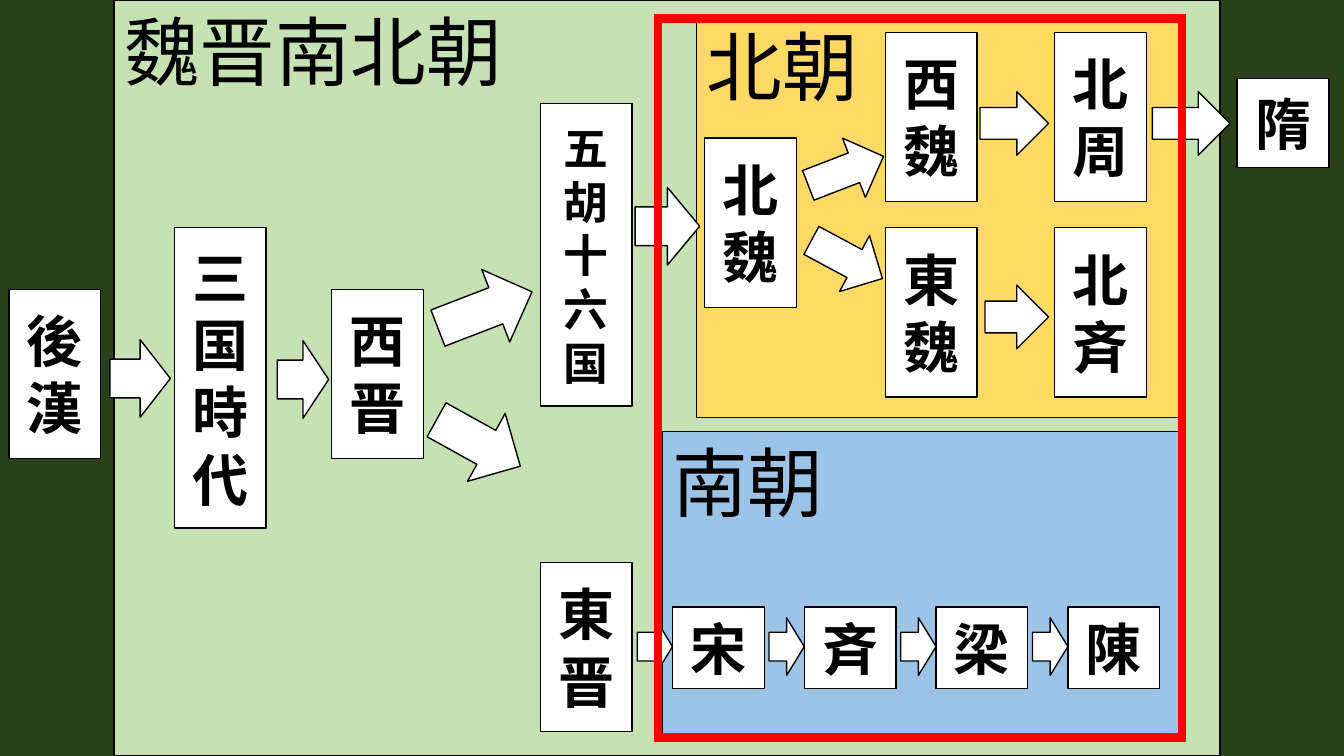
"""Build a slide charting the Chinese dynasties from Later Han to Sui."""
import pptx
import pptx.dml.color
import pptx.enum.shapes
import pptx.enum.text
import pptx.util

Inches = pptx.util.Inches
Pt = pptx.util.Pt
SHAPES = pptx.enum.shapes.MSO_SHAPE
ANCHOR = pptx.enum.text.MSO_ANCHOR
ALIGN = pptx.enum.text.PP_ALIGN

COLORS = {
    "background": "29401A",
    "era": "C6E1B4",
    "south": "9DC3E6",
    "north": "FFD966",
    "box": "FFFFFF",
    "ink": "000000",
    "frame": "FF0000",
}
FONT = "Calibri"
BOX_WIDTH = 0.91
BOX_HEIGHT = 1.68


def color(name):
    """Return the named palette colour."""
    return pptx.dml.color.RGBColor.from_string(COLORS[name])


def paint(shape, fill, line="ink"):
    """Give a shape its fill and thin outline."""
    shape.fill.solid()
    shape.fill.fore_color.rgb = color(fill)
    shape.line.color.rgb = color(line)
    shape.line.width = Pt(1)


def write(shape, text, size, bold, align, anchor):
    """Fill a shape with uniformly formatted paragraphs."""
    frame = shape.text_frame
    frame.text = text
    frame.word_wrap = True
    frame.auto_size = pptx.enum.text.MSO_AUTO_SIZE.NONE
    frame.vertical_anchor = anchor
    for paragraph in frame.paragraphs:
        paragraph.alignment = align
        paragraph.font.name = FONT
        paragraph.font.size = Pt(size)
        paragraph.font.bold = bold
        paragraph.font.color.rgb = color("ink")


def add_shape(slide, kind, left, top, width, height, fill, line="ink"):
    """Add a flat preset shape, measured in inches."""
    shape = slide.shapes.add_shape(
        kind, Inches(left), Inches(top), Inches(width), Inches(height))
    shape.shadow.inherit = False
    paint(shape, fill, line)
    return shape


def add_panel(slide, box, text, fill):
    """Add a coloured region with its large label."""
    panel = add_shape(slide, SHAPES.RECTANGLE, *box, fill)
    write(panel, text, 54, False, ALIGN.LEFT, ANCHOR.TOP)


def add_dynasty(slide, text, left, top, height=BOX_HEIGHT, size=40):
    """Add a white box naming a dynasty."""
    dynasty = add_shape(
        slide, SHAPES.RECTANGLE, left, top, BOX_WIDTH, height, "box")
    write(dynasty, text, size, True, ALIGN.CENTER, ANCHOR.MIDDLE)


def add_arrow(slide, left, top, width, height, rotation=0):
    """Add a white block arrow."""
    arrow = add_shape(
        slide, SHAPES.RIGHT_ARROW, left, top, width, height, "box")
    arrow.rotation = rotation


def add_era(slide, box):
    """Turn the title into the era panel behind everything."""
    title = slide.shapes.title
    title.left, title.top, title.width, title.height = map(Inches, box)
    paint(title, "era")
    write(title, "魏晋南北朝", 54, False, ALIGN.LEFT, ANCHOR.TOP)


def add_early_dynasties(slide, box):
    """Place the states from Later Han to the north-south split."""
    left, top = box[:2]
    add_dynasty(slide, "後漢", left - 1.04, top + 2.87)
    add_dynasty(slide, "三国時代", left + 0.6, top + 2.26, 2.98)
    add_dynasty(slide, "西晋", left + 2.16, top + 2.87)
    add_dynasty(slide, "五胡\n十六国", left + 4.23, top + 1.03, 3, 32)
    add_dynasty(slide, "東晋", left + 4.23, top + 5.58)
    for x, y, width, rotation in (
            (-0.04, 3.37, 0.6, 0), (1.62, 3.38, 0.51, 0),
            (3.18, 2.69, 1, 338.9), (3.14, 4.01, 0.95, 29),
            (5.17, 1.86, 0.64, 0)):
        add_arrow(slide, left + x, top + y, width, 0.77, rotation)


def add_north(slide, box):
    """Place the northern dynasties and the arrow on to Sui."""
    left, top = box[:2]
    add_panel(slide, box, "北朝", "north")
    add_dynasty(slide, "北魏", left + 0.08, top + 1.22)
    for row, names in enumerate((("西魏", "北周"), ("東魏", "北斉"))):
        for column, name in enumerate(names):
            add_dynasty(slide, name, left + 1.87 + 1.68 * column,
                        top + 0.17 + 1.94 * row)
    for x, y, width, rotation in (
            (1.08, 1.23, 0.8, 338.9), (1.09, 2.11, 0.8, 28.2),
            (2.81, 0.76, 0.68, 0), (2.86, 2.68, 0.63, 0),
            (4.52, 0.76, 0.77, 0)):
        add_arrow(slide, left + x, top + y, width, 0.63, rotation)
    add_dynasty(slide, "隋", left + 5.36, top + 0.63, 0.88)


def add_south(slide, box):
    """Place the southern dynasties in a row, each led in by an arrow."""
    left, top = box[:2]
    add_panel(slide, box, "南朝", "south")
    for index, name in enumerate("宋斉梁陳"):
        x = left + 0.1 + 1.307 * index
        add_dynasty(slide, name, x, top + 1.74, 0.81)
        add_arrow(slide, x - 0.35, top + 1.85, 0.35, 0.57)


def add_frame(slide, box):
    """Outline the northern and southern dynasties in red."""
    frame = add_shape(slide, SHAPES.FRAME, *box, "frame", "frame")
    frame.adjustments[0] = 0.014


def main():
    """Build and save the presentation."""
    presentation = pptx.Presentation()
    presentation.slide_width = Inches(13.33)
    presentation.slide_height = Inches(7.5)
    slide = presentation.slides.add_slide(presentation.slide_layouts[5])
    slide.background.fill.solid()
    slide.background.fill.fore_color.rgb = color("background")
    era = (1.13, 0, 10.97, 7.5)
    add_era(slide, era)
    add_south(slide, (6.57, 4.28, 5.19, 3.07))
    add_north(slide, (6.91, 0.15, 4.85, 3.99))
    add_early_dynasties(slide, era)
    add_frame(slide, (6.49, 0.15, 5.27, 7.2))
    presentation.save("out.pptx")


if __name__ == "__main__":
    main()
